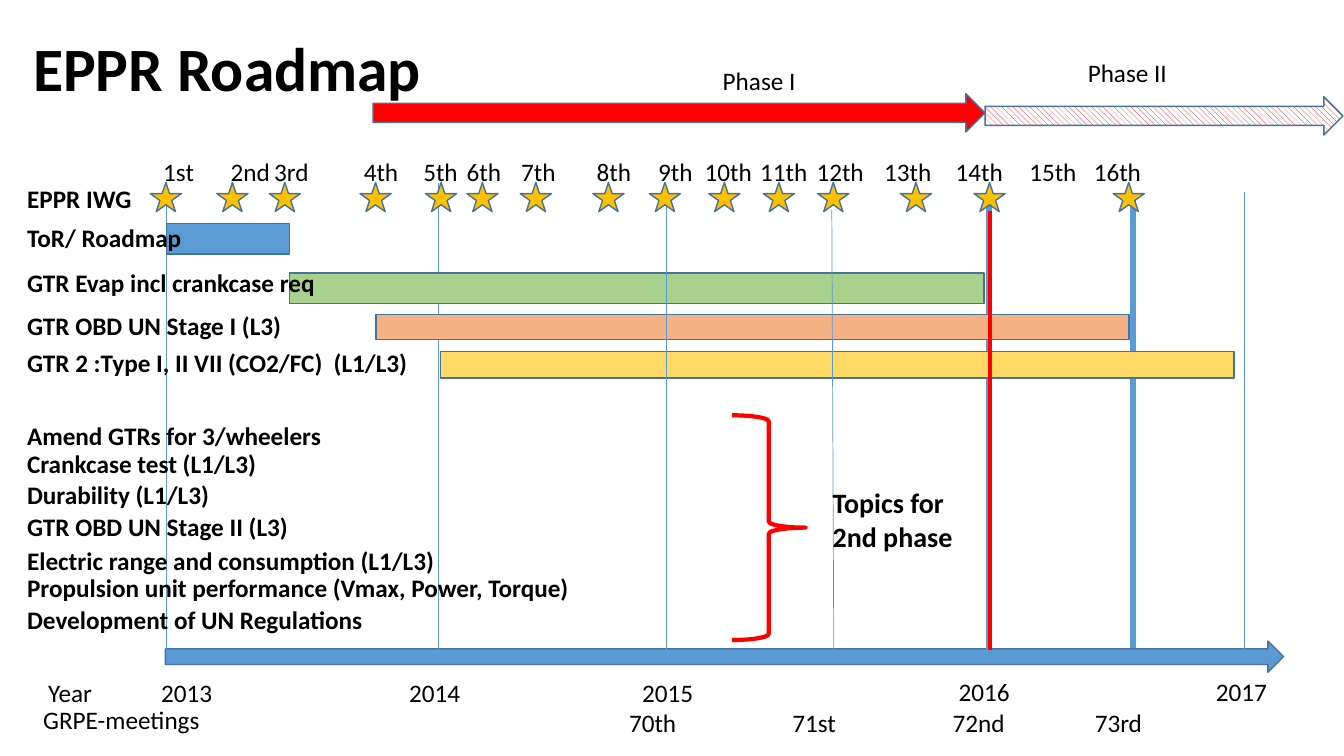
import pptx
import pptx.dml.color
import pptx.enum.dml
import pptx.enum.shapes
import pptx.enum.text
import pptx.util
from lxml import etree
from pptx.dml.color import RGBColor
from pptx.util import Inches

BLACK = RGBColor(0x00, 0x00, 0x00)
WHITE = RGBColor(0xFF, 0xFF, 0xFF)
RED = RGBColor(0xFF, 0x00, 0x00)
BLUE = RGBColor(0x5B, 0x9B, 0xD5)
OUTLINE = RGBColor(0x43, 0x73, 0x9E)
GOLD = RGBColor(0xFF, 0xC0, 0x00)
GREEN = RGBColor(0xA9, 0xD1, 0x8E)
ORANGE = RGBColor(0xF4, 0xB1, 0x83)
YELLOW = RGBColor(0xFF, 0xD9, 0x66)

SHAPES = pptx.enum.shapes.MSO_SHAPE
DRAWING = "{http://schemas.openxmlformats.org/drawingml/2006/main}"
TEXT_HEIGHT = 0.4

BACK_LINES = [(11.24, 1.95, 11.24, 6.58, BLUE, 4.5)]
YEAR_LINES = [
    (1.65, 1.85, 1.65, 6.48, BLUE, 0.5),
    (4.35, 1.82, 4.35, 6.45, BLUE, 0.5),
    (9.81, 1.93, 9.81, 6.57, BLUE, 4.5),
    (12.34, 1.9, 12.34, 6.54, BLUE, 0.5),
]
FRONT_LINES = [
    (6.61, 1.87, 6.61, 6.51, BLUE, 0.5),
    (9.82, 6.45, 9.82, 2.09, RED, 3),
    (8.25, 2.08, 8.27, 6.45, BLUE, 0.5),
]
BARS = [
    (1.65, 2.22, 1.22, 0.3, BLUE),
    (2.87, 2.71, 6.89, 0.3, GREEN),
    (3.73, 3.12, 7.47, 0.25, ORANGE),
    (4.37, 3.49, 7.87, 0.26, YELLOW),
]
TOPICS = [
    ("EPPR IWG", 1.77, 1.25),
    ("ToR/ Roadmap", 2.16, 1.74),
    ("GTR Evap incl crankcase req", 2.6, 3.2),
    ("GTR OBD UN Stage I (L3)", 3.03, 2.75),
    ("GTR 2 :Type I, II VII (CO2/FC)  (L1/L3)", 3.4, 4.01),
    ("Amend GTRs for 3/wheelers", 4.12, 3.14),
    ("Crankcase test (L1/L3)", 4.4, 2.5),
    ("Durability (L1/L3)", 4.71, 2.02),
    ("GTR OBD UN Stage II (L3)", 5.02, 2.82),
    ("Electric range and consumption (L1/L3)", 5.36, 4.28),
    ("Propulsion unit performance (Vmax, Power, Torque)", 5.63, 5.62),
    ("Development of UN Regulations", 5.95, 3.55),
]
MEETINGS = [
    ("1st", 1.52, 0.51), ("2nd", 2.19, 0.6), ("3rd", 2.62, 0.55),
    ("4th", 3.51, 0.55), ("5th", 4.1, 0.55), ("6th", 4.53, 0.55),
    ("7th", 5.07, 0.55), ("8th", 5.82, 0.55), ("9th", 6.43, 0.55),
    ("10th", 6.89, 0.68), ("11th", 7.44, 0.68), ("12th", 8, 0.68),
    ("13th", 8.67, 0.68), ("14th", 9.38, 0.68), ("15th", 10.11, 0.68),
    ("16th", 10.75, 0.68),
]
STARS = [1.49, 2.15, 2.67, 3.57, 4.22, 4.63, 5.16, 5.88,
         6.44, 7.03, 7.57, 8.11, 8.93, 9.66, 11.04]
CAPTIONS = [
    ("Phase I", 7.07, 0.6, 0.93),
    ("Phase II", 10.69, 0.52, 0.99),
    ("Year", 0.38, 6.67, 0.64),
    ("2013", 1.5, 6.67, 0.71),
    ("2014", 3.96, 6.67, 0.71),
    ("2015", 6.27, 6.67, 0.71),
    ("2016", 9.41, 6.66, 0.71),
    ("2017", 11.96, 6.66, 0.71),
    ("GRPE-meetings", 0.33, 6.94, 1.77),
    ("70th", 6.14, 6.97, 0.68),
    ("71st", 7.76, 6.97, 0.64),
    ("72nd", 9.35, 6.97, 0.78),
    ("73rd", 10.76, 6.97, 0.73),
]


def set_values(target, values):
    for name, value in values.items():
        setattr(target, name, value)


def add_text(slide, text, left, top, width, height=TEXT_HEIGHT, size=18, bold=False, wrap=False):
    box = slide.shapes.add_textbox(Inches(left), Inches(top), Inches(width), Inches(height))
    box.text_frame.word_wrap = wrap
    paragraph = box.text_frame.paragraphs[0]
    run = paragraph.add_run()
    run.text = text
    set_values(run.font, {"name": "Calibri", "size": pptx.util.Pt(size), "bold": bold})
    run.font.color.rgb = BLACK
    return box


def add_title(slide, text):
    title = add_text(slide, text, 0.23, -0.02, 11.5, 1.45, size=44, bold=True, wrap=True)
    title.text_frame.vertical_anchor = pptx.enum.text.MSO_ANCHOR.MIDDLE
    title.text_frame.paragraphs[0].line_spacing = 0.9


def add_shape(slide, kind, left, top, width, height, fill=None, line=OUTLINE, weight=1):
    shape = slide.shapes.add_shape(kind, Inches(left), Inches(top), Inches(width), Inches(height))
    shape.shadow.inherit = False
    if fill is None:
        shape.fill.background()
    else:
        shape.fill.solid()
        shape.fill.fore_color.rgb = fill
    shape.line.color.rgb = line
    shape.line.width = pptx.util.Pt(weight)
    return shape


def add_hatched_arrow(slide, left, top, width, height):
    arrow = add_shape(slide, SHAPES.RIGHT_ARROW, left, top, width, height)
    arrow.fill.patterned()
    arrow.fill.pattern = pptx.enum.dml.MSO_PATTERN.WIDE_DOWNWARD_DIAGONAL
    arrow.fill.fore_color.rgb = RED
    arrow.fill.back_color.rgb = WHITE


def add_lines(slide, lines):
    for start_x, start_y, end_x, end_y, color, weight in lines:
        connector = slide.shapes.add_connector(
            pptx.enum.shapes.MSO_CONNECTOR.STRAIGHT,
            Inches(start_x), Inches(start_y), Inches(end_x), Inches(end_y))
        connector.line.color.rgb = color
        connector.line.width = pptx.util.Pt(weight)
        etree.SubElement(connector._element.spPr, DRAWING + "effectLst")


def main():
    presentation = pptx.Presentation()
    set_values(presentation, {"slide_width": Inches(13.33), "slide_height": Inches(7.5)})
    slide = presentation.slides.add_slide(presentation.slide_layouts[6])

    add_lines(slide, BACK_LINES)
    add_title(slide, "EPPR Roadmap")
    add_shape(slide, SHAPES.RIGHT_ARROW, 1.64, 6.36, 11.09, 0.31, BLUE)
    add_lines(slide, YEAR_LINES)
    for left, top, width, height, color in BARS:
        add_shape(slide, SHAPES.RECTANGLE, left, top, width, height, color)
    add_lines(slide, FRONT_LINES)
    add_shape(slide, SHAPES.RIGHT_ARROW, 3.7, 0.93, 6.07, 0.38, RED)
    add_hatched_arrow(slide, 9.77, 0.96, 3.55, 0.38)
    for left in STARS:
        add_shape(slide, SHAPES.STAR_5_POINT, left, 1.81, 0.31, 0.29, GOLD)
    for text, top, width in TOPICS:
        add_text(slide, text, 0.17, top, width, bold=True)
    for text, left, width in MEETINGS:
        add_text(slide, text, left, 1.5, width)
    for text, left, top, width in CAPTIONS:
        add_text(slide, text, left, top, width)
    add_shape(slide, SHAPES.RIGHT_BRACE, 7.26, 4.12, 0.73, 2.23, line=RED, weight=3)
    add_text(slide, "Topics for 2nd phase", 8.16, 4.77, 1.68, 0.77, size=20, bold=True, wrap=True)

    presentation.save("out.pptx")


if __name__ == "__main__":
    main()
